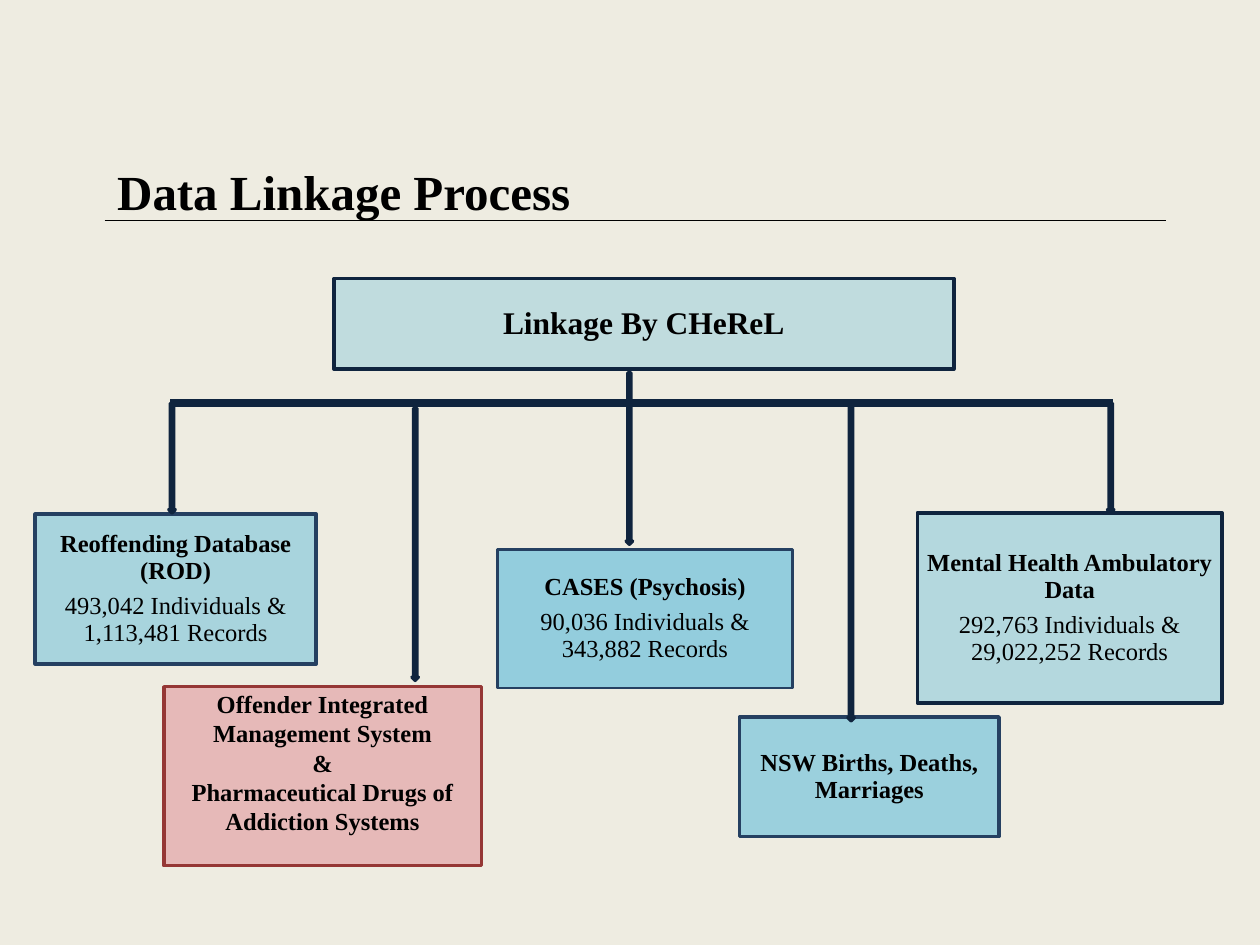
from pptx import Presentation
from pptx.dml.color import RGBColor
from pptx.enum.shapes import MSO_CONNECTOR as CONN, MSO_SHAPE as SHAPE
from pptx.enum.text import MSO_ANCHOR as ANCHOR, PP_ALIGN as ALIGN
from pptx.oxml.ns import qn
from pptx.util import Inches, Pt
from lxml import etree

FONT = "Times New Roman"
COLORS = {
    "background": "EEECE1",
    "text": "000000",
    "aqua": "93CDDD",
    "blue": "254061",
    "navy": "0F243E",
    "arrow": "4F81BD",
    "pink": "E6B9B8",
    "red": "953735",
}


def rgb(name):
    return RGBColor.from_string(COLORS[name])


def add_run(p, text, size, bold=True):
    r = p.add_run()
    r.text = text
    r.font.name, r.font.size, r.font.bold = FONT, Pt(size), bold
    r.font.color.rgb = rgb("text")


def add_line(s, x1, x2, y, color, width):
    line = s.shapes.add_connector(
        CONN.STRAIGHT, Inches(x1), Inches(y), Inches(x2), Inches(y))
    line.line.color.rgb = rgb(color)
    line.line.width = Pt(width)
    etree.SubElement(line._element.spPr, qn("a:effectLst"))


def add_shape(s, kind, box, fill, line, width=2, opacity=100):
    sp = s.shapes.add_shape(kind, *map(Inches, box))
    sp.shadow.inherit = False
    sp.fill.solid()
    sp.fill.fore_color.rgb = rgb(fill)
    sp.line.color.rgb = rgb(line)
    sp.line.width = Pt(width)
    if opacity < 100:
        color = sp._element.spPr.find(qn("a:solidFill")).find(qn("a:srgbClr"))
        etree.SubElement(color, qn("a:alpha"), val=str(opacity * 1000))
    return sp


def add_text(sp, paragraphs, size, inset, spacing=0.9, after=5):
    """Write (text, bold) paragraphs centred in a shape; inset is (side, top, bottom)."""
    tf = sp.text_frame
    tf.word_wrap = True
    tf.vertical_anchor = ANCHOR.MIDDLE
    side, top, bottom = map(Inches, inset)
    tf.margin_left = tf.margin_right = side
    tf.margin_top, tf.margin_bottom = top, bottom
    for i, (text, bold) in enumerate(paragraphs):
        p = tf.add_paragraph() if i else tf.paragraphs[0]
        p.alignment = ALIGN.CENTER
        p.line_spacing = spacing
        p.space_after = Pt(after)
        add_run(p, text, size, bold)


def add_title(s, left, top, width, height):
    add_line(s, left, 9.25, 1.75, "text", 0.75)
    title = s.shapes.title
    title.left, title.top = Inches(left), Inches(top)
    title.width, title.height = Inches(width), Inches(height)
    tf = title.text_frame
    tf.vertical_anchor = ANCHOR.MIDDLE
    p = tf.paragraphs[0]
    p.alignment = ALIGN.LEFT
    add_run(p, "Data Linkage Process", 28)


def add_source(s, box, line, opacity, name, counts=None, inset=0.06, width=2):
    sp = add_shape(s, SHAPE.RECTANGLE, box, "aqua", line, width, opacity)
    paragraphs = [(name, True)]
    if counts:
        paragraphs.append((counts, False))
    add_text(sp, paragraphs, 14, (inset,) * 3)


def add_hub(s, box):
    sp = add_shape(s, SHAPE.RECTANGLE, box, "aqua", "navy", opacity=50)
    add_text(sp, [("Linkage By CHeReL", True)], 18, (0.07,) * 3)


def add_offender_systems(s, box):
    sp = add_shape(s, SHAPE.RECTANGLE, box, "pink", "red")
    names = ["Offender Integrated Management System", "&",
             "Pharmaceutical Drugs of Addiction Systems"]
    add_text(sp, [(name, True) for name in names], 14, (0.1, 0, 0.22),
             spacing=1, after=0)


def add_branches(s, left, right, bar_y):
    """Draw the horizontal bar and the arrows that drop to each source."""
    arrows = [(6.73, bar_y, 5.72), (3.27, 3.24, 5.4), (4.97, 2.96, 4.32),
              (1.34, bar_y, 4.07), (8.79, bar_y, 4.07)]
    for x, top, bottom in arrows:
        add_shape(s, SHAPE.DOWN_ARROW, (x, top, 0.05, bottom - top),
                  "arrow", "navy")
    add_line(s, left, right, bar_y, "navy", 4.5)


def main():
    prs = Presentation()
    prs.slide_width, prs.slide_height = Inches(10), Inches(7.5)
    s = prs.slides.add_slide(prs.slide_layouts[5])
    s.background.fill.solid()
    s.background.fill.fore_color.rgb = rgb("background")

    add_title(s, 0.83, 1.18, 8.5, 0.67)
    add_source(s, (5.87, 5.69, 2.06, 0.95), "blue", 90,
               "NSW Births, Deaths, Marriages")
    add_source(s, (0.28, 4.08, 2.23, 1.19), "blue", 77,
               "Reoffending Database (ROD)",
               "493,042 Individuals & 1,113,481 Records")
    add_source(s, (7.28, 4.07, 2.42, 1.51), "navy", 63,
               "Mental Health Ambulatory Data",
               "292,763 Individuals & 29,022,252 Records", inset=0.04)
    add_hub(s, (2.65, 2.21, 4.92, 0.72))
    add_branches(s, 1.35, 8.83, 3.2)
    add_source(s, (3.95, 4.36, 2.34, 1.1), "blue", 100,
               "CASES (Psychosis)",
               "90,036 Individuals & 343,882 Records", width=1.5)
    add_offender_systems(s, (1.3, 5.45, 2.52, 1.42))
    prs.save("out.pptx")


if __name__ == "__main__":
    main()
